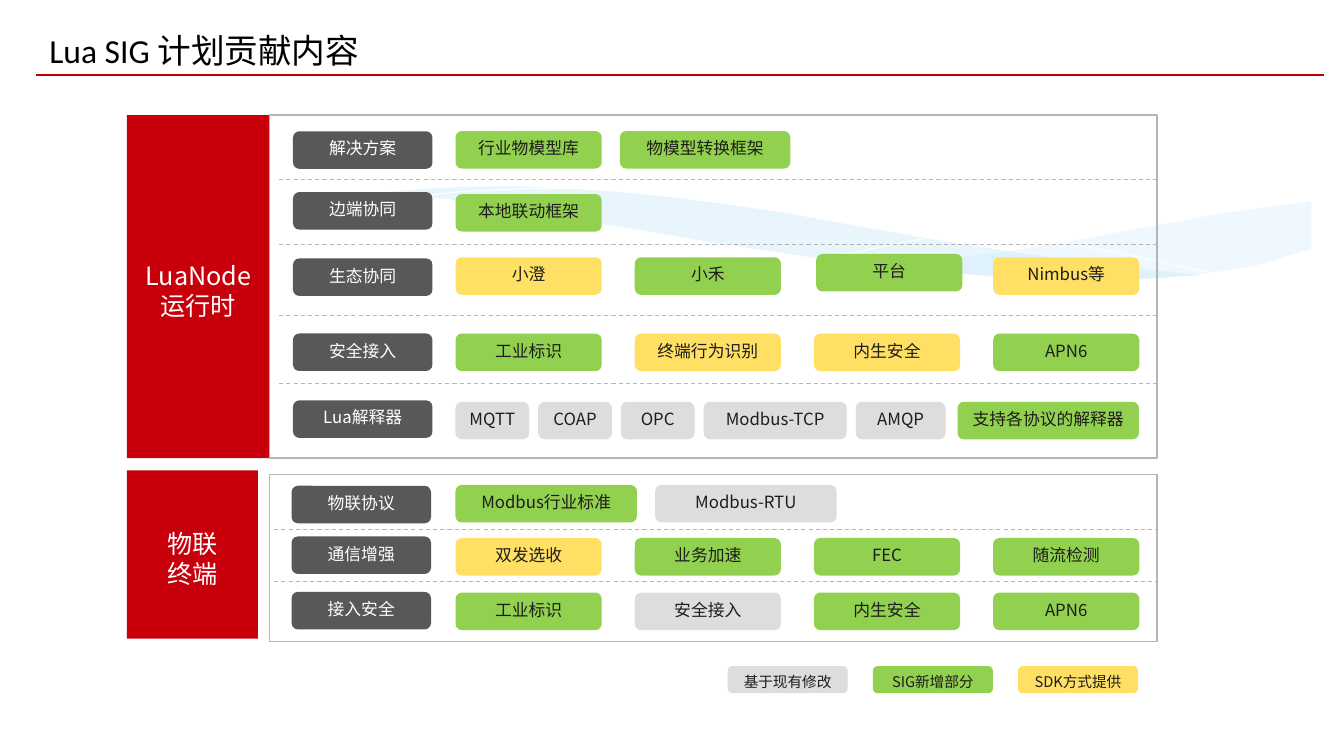
import pptx
import pptx.util
import pptx.dml.color
import pptx.enum.dml
import pptx.enum.shapes
import pptx.enum.text
import pptx.oxml.ns
import lxml.etree

Pt = pptx.util.Pt
RGBColor = pptx.dml.color.RGBColor
Shapes = pptx.enum.shapes.MSO_SHAPE
Align = pptx.enum.text.PP_ALIGN
Anchor = pptx.enum.text.MSO_ANCHOR
qn = pptx.oxml.ns.qn

BLACK = RGBColor(0x00, 0x00, 0x00)
WHITE = RGBColor(0xFF, 0xFF, 0xFF)
INK = RGBColor(0x1D, 0x1D, 0x1A)
RULE_RED = RGBColor(0xC0, 0x00, 0x00)
PANEL_RED = RGBColor(0xC7, 0x00, 0x0B)
DARK = RGBColor(0x59, 0x57, 0x57)
BORDER = RGBColor(0xB5, 0xB5, 0xB5)
GREY = RGBColor(0xDD, 0xDD, 0xDD)
GREEN = RGBColor(0x92, 0xD0, 0x50)
YELLOW = RGBColor(0xFF, 0xDF, 0x64)
SKY = RGBColor(0xC6, 0xE7, 0xFC)

FONT = "Noto Sans CJK SC"
CHIP_LEFT, CHIP_PITCH, CHIP_WIDTH, CHIP_HEIGHT = 325.4, 128, 104.4, 26.8
COLUMNS = [CHIP_LEFT + CHIP_PITCH * i for i in range(4)]

# Background waves: points and opacity in percent
RIGHT_WAVE = [
    (936, 144), (911, 147), (870, 153), (826, 161), (772, 171), (724, 179),
    (677, 185), (635, 191), (663, 193.5), (703, 197), (738, 199), (771, 200),
    (801, 199.5), (828, 198.5), (853, 196.5), (877, 193), (898, 189.5),
    (924, 181.5), (936.7, 177.8), (936.7, 144)]
LEFT_WAVE = [
    (857, 196.5), (804, 191), (745, 183), (678, 173), (604, 160), (560, 152),
    (519, 146), (481, 141), (446, 137.5), (403, 134.5), (364, 133),
    (330, 133.5), (301, 135), (275, 137.5), (310, 141), (348, 146),
    (388, 152), (431, 160), (508, 173), (577, 183.5), (625, 190), (681, 195),
    (732, 198.5), (775, 200), (814, 199.5)]
LEFT_STREAK = [
    (297, 140.5), (330, 136.8), (371, 135), (416, 134.6), (469, 136.8),
    (534, 142), (610, 150), (698, 162.5), (798, 180.5), (871, 196)]
RIGHT_STREAK = [
    (589, 185), (626, 177), (667, 169), (718, 160.5), (774, 151), (832, 143),
    (873, 138), (912, 134.6), (936, 133)]

# Rows: label, label top, chip top, chips as (text, colour[, left, width[, top]])
RUNTIME_ROWS = [
    ("解决方案", 93.8, 93.6, [("行业物模型库", GREEN),
                          ("物模型转换框架", GREEN, 442.8, 121.7)]),
    ("边端协同", 137.2, 138.6, [("本地联动框架", GREEN)]),
    ("生态协同", 184.6, 183.8, [("小澄", YELLOW), ("小禾", GREEN),
                            ("平台", GREEN, 583, CHIP_WIDTH, 181.4),
                            ("Nimbus等", YELLOW)]),
    ("安全接入", 238.2, 238.3, [("工业标识", GREEN), ("终端行为识别", YELLOW),
                            ("内生安全", YELLOW), ("APN6", GREEN)]),
    ("Lua解释器", 286, 287, [("MQTT", GREY, 325.4, 52.6), ("COAP", GREY, 384.5, 52.6),
                          ("OPC", GREY, 443.5, 52.6), ("Modbus-TCP", GREY, 502.6, 102.2),
                          ("AMQP", GREY, 611.3, 64.1),
                          ("支持各协议的解释器", GREEN, 684, 129.6)]),
]
TERMINAL_ROWS = [
    ("物联协议", 347, 346.4, [("Modbus行业标准", GREEN, 325.4, 129.6),
                          ("Modbus-RTU", GREY, 468, 129.6)]),
    ("通信增强", 383.2, 384.3, [("双发选收", YELLOW), ("业务加速", GREEN),
                            ("FEC", GREEN), ("随流检测", GREEN)]),
    ("接入安全", 422.8, 423.3, [("工业标识", GREEN), ("安全接入", GREY),
                            ("内生安全", GREEN), ("APN6", GREEN)]),
]
LEGEND = [("基于现有修改", GREY), ("SIG新增部分", GREEN), ("SDK方式提供", YELLOW)]


def write_text(frame, text, size=12, color=INK, font=FONT, align=Align.CENTER,
               anchor=Anchor.TOP, insets=(2.9, 3.6, 2.9, 3.6)):
    frame.word_wrap = True
    frame.vertical_anchor = anchor
    (frame.margin_left, frame.margin_top,
     frame.margin_right, frame.margin_bottom) = map(Pt, insets)
    for i, line in enumerate(text.split("\n")):
        para = frame.add_paragraph() if i else frame.paragraphs[0]
        para.alignment = align
        span = para.add_run()
        span.text = line
        span.font.name, span.font.size = font, Pt(size)
        span.font.color.rgb = color
        if font == FONT:
            east = lxml.etree.SubElement(span.font._element, qn("a:ea"))
            east.set("typeface", font)


def add_box(page, kind, left, top, width, height, fill=None, border=None):
    box = page.shapes.add_shape(kind, Pt(left), Pt(top), Pt(width), Pt(height))
    box.shadow.inherit = False
    if fill is None:
        box.fill.background()
    else:
        box.fill.solid()
        box.fill.fore_color.rgb = fill
    if border is None:
        box.line.fill.background()
    else:
        box.line.color.rgb = border
        box.line.width = Pt(1)
    return box


def add_chip(page, text, left, top, width, fill, height=CHIP_HEIGHT, **style):
    box = add_box(page, Shapes.ROUNDED_RECTANGLE, left, top, width, height, fill)
    write_text(box.text_frame, text, **style)


def add_rule(page, left, right, y, color, width, dashed=False):
    rule = page.shapes.add_connector(
        pptx.enum.shapes.MSO_CONNECTOR.STRAIGHT, Pt(left), Pt(y), Pt(right), Pt(y))
    rule.line.color.rgb = color
    rule.line.width = Pt(width)
    if dashed:
        rule.line.dash_style = pptx.enum.dml.MSO_LINE.DASH
    lxml.etree.SubElement(rule._element.spPr, qn("a:effectLst"))


def add_wave(page, points, opacity=None):
    """Draw a filled wave, or a thin white streak when no opacity is given."""
    corners = [(Pt(x), Pt(y)) for x, y in points]
    builder = page.shapes.build_freeform(*corners[0], scale=1.0)
    builder.add_line_segments(corners[1:], close=opacity is not None)
    wave = builder.convert_to_shape()
    wave.shadow.inherit = False
    if opacity is None:
        wave.fill.background()
        wave.line.color.rgb = WHITE
        wave.line.width = Pt(0)
    else:
        wave.fill.solid()
        wave.fill.fore_color.rgb = SKY
        color = wave._element.spPr.find(".//" + qn("a:srgbClr"))
        lxml.etree.SubElement(color, qn("a:alpha")).set("val", str(opacity * 1000))
        wave.line.fill.background()


def add_title(page, text):
    title = page.shapes.title
    title.left, title.top, title.width, title.height = Pt(28), Pt(18), Pt(491), Pt(36)
    write_text(title.text_frame, text, size=24, color=BLACK, font="Calibri",
               align=Align.LEFT, insets=(7.2, 3.6, 7.2, 3.6))
    title.text_frame.auto_size = pptx.enum.text.MSO_AUTO_SIZE.SHAPE_TO_FIT_TEXT


def add_section(page, heading, heading_area, frame_area, rows, label_left,
                divider_left, dividers):
    panel = add_box(page, Shapes.RECTANGLE, *heading_area, fill=PANEL_RED)
    write_text(panel.text_frame, heading, size=18, color=WHITE,
               anchor=Anchor.MIDDLE, insets=(5.8, 5.8, 5.8, 0))
    add_box(page, Shapes.RECTANGLE, *frame_area, border=BORDER)
    for y in dividers:
        add_rule(page, divider_left, 826.6, y, BORDER, 0.75, dashed=True)
    for label, label_top, chip_top, chips in rows:
        add_chip(page, label, label_left, label_top, 99.6, DARK, color=WHITE)
        for column, (text, fill, *place) in enumerate(chips):
            left, width, top = place + [COLUMNS[column] if not place else 0,
                                        CHIP_WIDTH, chip_top][len(place):]
            add_chip(page, text, left, top, width, fill)


def main():
    deck = pptx.Presentation()
    deck.slide_width, deck.slide_height = Pt(960), Pt(540)
    page = deck.slides.add_slide(deck.slide_layouts[5])

    # Background
    add_wave(page, RIGHT_WAVE, opacity=29)
    add_wave(page, LEFT_WAVE, opacity=40)
    add_wave(page, LEFT_STREAK)
    add_wave(page, RIGHT_STREAK)

    # Title
    add_rule(page, 26, 945.4, 53.3, RULE_RED, 1.5)
    add_title(page, "Lua SIG 计划贡献内容")

    # Runtime and terminal sections
    add_section(page, "LuaNode\n运行时", (90.7, 82.2, 102, 245), (192.4, 82.2, 634.2, 245),
                RUNTIME_ROWS, 209.3, 199.4, (128.2, 174.7, 225.4, 273.8))
    add_section(page, "物联\n终端", (90.7, 336, 93.6, 120.2), (192.4, 339, 634.2, 119.4),
                TERMINAL_ROWS, 208.3, 195.8, (378.4, 415.4))

    # Legend
    for i, (text, fill) in enumerate(LEGEND):
        add_chip(page, text, 519.8 + 103.7 * i, 475.8, 85.7, fill, height=19.4, size=10.5)

    deck.save("out.pptx")


if __name__ == "__main__":
    main()
